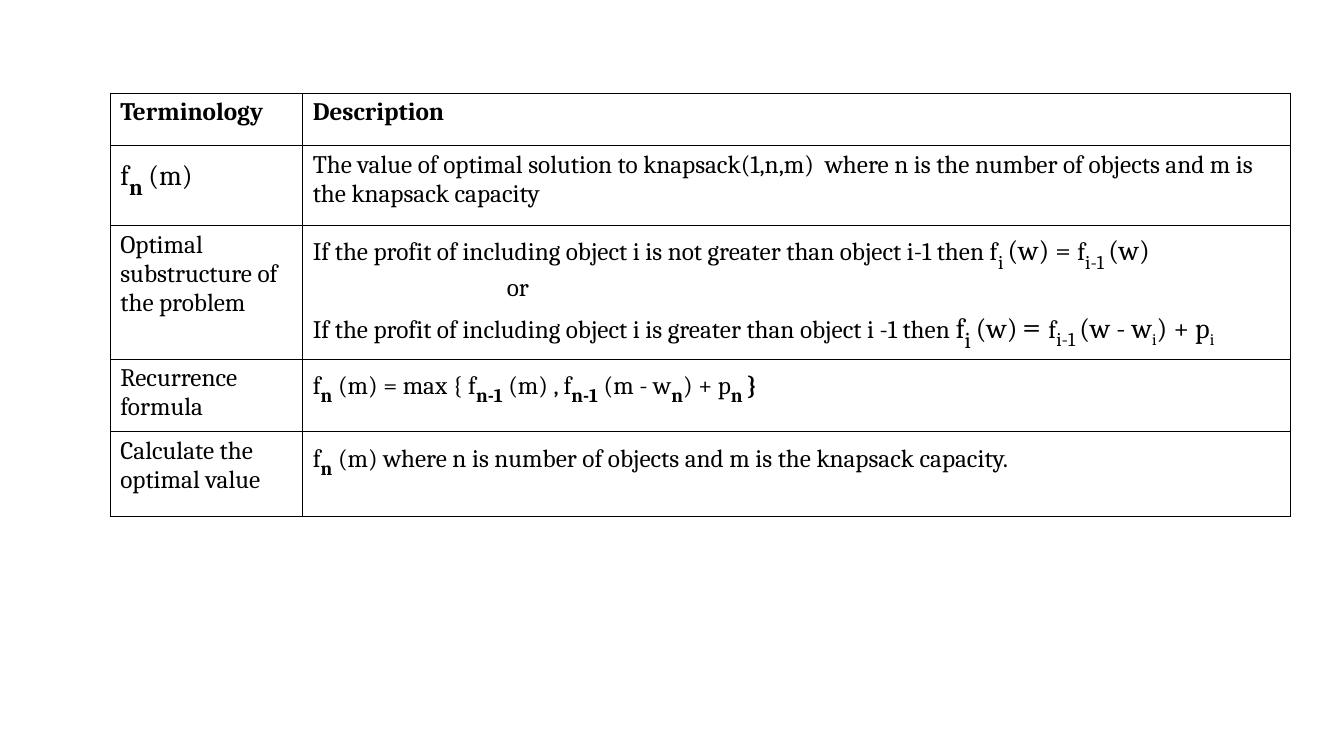
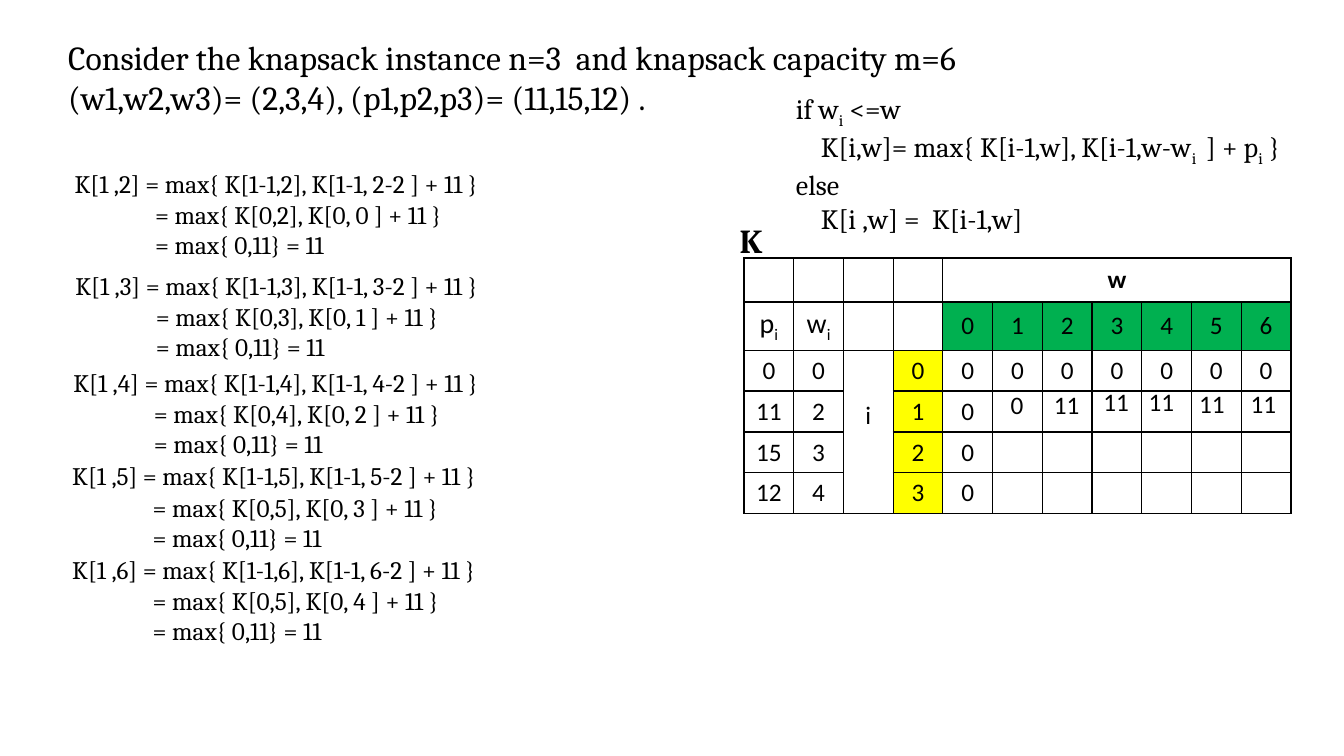
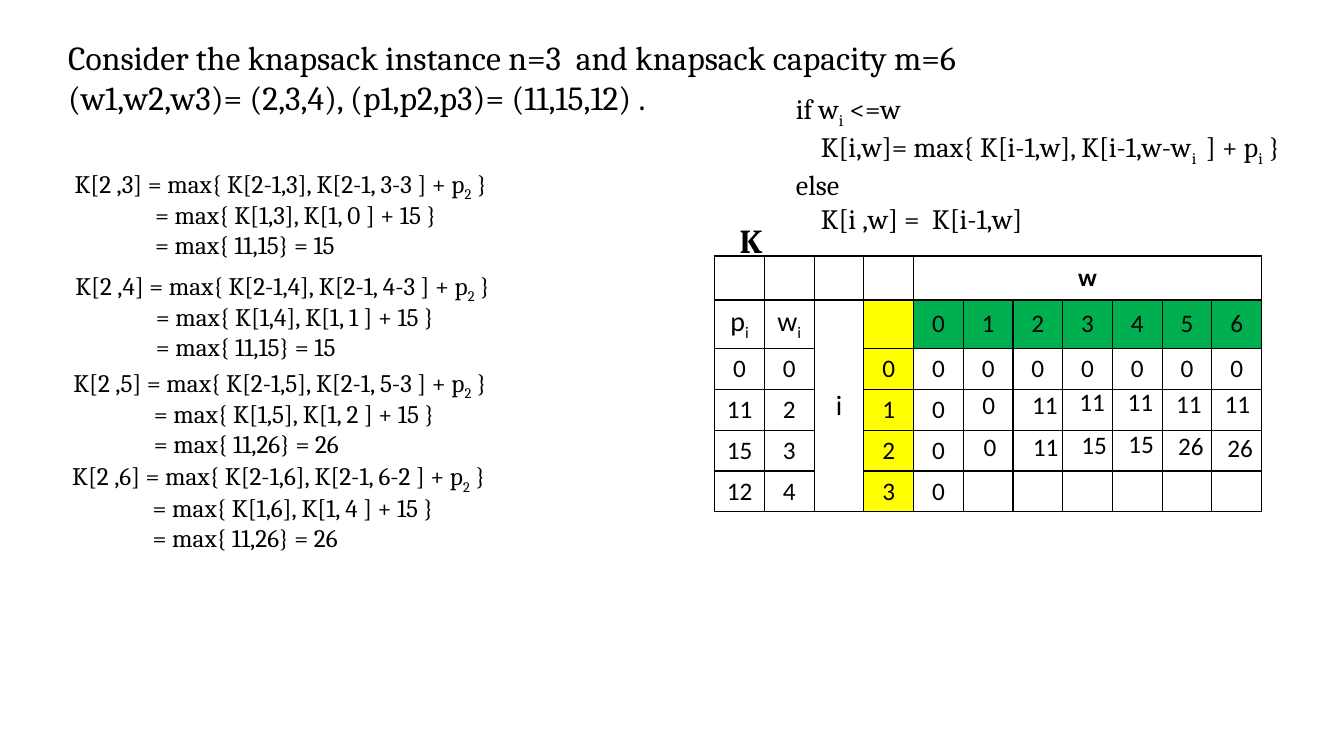
from lxml import etree
from pptx import Presentation
from pptx.dml.color import RGBColor
from pptx.enum.text import MSO_ANCHOR, PP_ALIGN
from pptx.oxml.ns import qn
from pptx.util import Cm, Pt

MIDDLE, TOP = MSO_ANCHOR.MIDDLE, MSO_ANCHOR.TOP
CENTER, LEFT = PP_ALIGN.CENTER, PP_ALIGN.LEFT
SERIF, SANS = "Cambria", "Calibri"
BLACK, WHITE, GREEN, YELLOW = "000000", "FFFFFF", "00B050", "FFFF00"
BLANK_LAYOUT = 6


def rgb(value):
    return RGBColor.from_string(value)


def run(text, size=None, bold=False, sub=False):
    return text, size, bold, sub


def sub(text, size=None, bold=False):
    return run(text, size, bold, True)


def add_runs(p, runs, size, font):
    for text, own_size, bold, lowered in runs:
        r = p.add_run()
        r.text = text
        r.font.name = font
        r.font.size = Pt(own_size or size)
        r.font.bold = bold
        r.font.color.rgb = rgb(BLACK)
        if lowered:
            r.font._element.set("baseline", "-25000")


def fill_text(tf, lines, size, font, align=LEFT):
    for n, (indent, runs) in enumerate(lines):
        p = tf.paragraphs[0] if n == 0 else tf.add_paragraph()
        p.alignment = align
        if indent:
            p._p.get_or_add_pPr().set("marL", str(Cm(indent)))
        add_runs(p, runs, size, font)


def add_text(s, box, lines, size, font=SERIF):
    sp = s.shapes.add_textbox(*map(Cm, box))
    sp.text_frame.word_wrap = True
    fill_text(sp.text_frame, lines, size, font)


def style_cell(cell, color=WHITE, anchor=TOP):
    tcPr = cell._tc.get_or_add_tcPr()
    for side in ("lnL", "lnR", "lnT", "lnB"):
        ln = etree.SubElement(tcPr, qn(f"a:{side}"), w=str(Pt(1)))
        solid = etree.SubElement(ln, qn("a:solidFill"))
        etree.SubElement(solid, qn("a:srgbClr"), val=BLACK)
    cell.fill.solid()
    cell.fill.fore_color.rgb = rgb(color)
    cell.vertical_anchor = anchor


def add_grid(s, left, top, widths, heights):
    frame = s.shapes.add_table(len(heights), len(widths), Cm(left), Cm(top),
                               Cm(sum(widths)), Cm(sum(heights)))
    table = frame.table
    table.first_row = table.horz_banding = False
    for col, width in zip(table.columns, widths):
        col.width = Cm(width)
    for row, height in zip(table.rows, heights):
        row.height = Cm(height)
    return table


TERMS = [
    ([run("Terminology", bold=True)], [(0, [run("Description", bold=True)])]),
    ([run("f", 20), sub("n", 28, True), run(" "), run("(m)", 20)],
     [(0, [run("The value of optimal solution to knapsack(1,n,m)  where n is the "
               "number of objects and m is the knapsack capacity")])]),
    ([run("Optimal substructure of the problem")],
     [(0, [run("If the profit of including object i is not greater than object i-1 then f"),
           sub("i ", 24), run("(w) = ", 20), run("f"), sub("i-1 ", 24), run("(w)", 20)]),
      (4.89, [run("or")]),
      (0, [run("If the profit of including object i is greater than object i -1 then "),
           run("f", 20), sub("i ", 28), run("(w)", 20), run(" ", 16), run("= ", 24),
           run("f"), sub("i-1 ", 24), run("(w - w", 20), sub("i", 20),
           run(") + p", 20), sub("i", 20)])]),
    ([run("Recurrence formula")],
     [(0, [run("f"), sub("n", 24, True), run(" (m) = max { f"), sub("n-1", 24, True),
           run(" (m) , f"), sub("n-1", 24, True), run(" (m - w"), sub("n", 24, True),
           run(") + p"), sub("n ", 24, True), run("}", bold=True)])]),
    ([run("Calculate the optimal value")],
     [(0, [run("f"), sub("n", 24, True),
           run(" (m) where n is number of objects and m is the knapsack capacity.")])]),
]


def add_terms(s, left, top):
    table = add_grid(s, left, top, [4.85, 24.89], [1.32, 2.01, 3.37, 1.83, 2.13])
    for row, (term, description) in enumerate(TERMS):
        for col, lines in enumerate(([(0, term)], description)):
            cell = table.cell(row, col)
            style_cell(cell)
            fill_text(cell.text_frame, lines, 18, SERIF)


def add_knapsack_table(s, left, top, i_row, i_size, i_bottom, corner):
    table = add_grid(s, left, top, [13.79 / 11] * 11, [1.11, 1.2] + [1.03] * 4)
    texts = {(0, 4): [run("w", bold=True)],
             (1, 0): [run("p", 20), sub("i", 20)],
             (1, 1): [run("w", 20), sub("i", 20)],
             (i_row, 2): [run("i", i_size)]}
    colors = {(1, 3): corner}
    for w in range(7):
        texts[1, 4 + w] = texts[2, 4 + w] = [run(str(w))]
        texts[2, 4 + w] = [run("0")]
        colors[1, 4 + w] = GREEN
    for i, (profit, weight) in enumerate([(0, 0), (11, 2), (15, 3), (12, 4)]):
        for col, value in ((0, profit), (1, weight), (3, i), (4, 0)):
            texts[2 + i, col] = [run(str(value))]
        colors[2 + i, 3] = YELLOW
    for row in range(6):
        for col in range(11):
            cell = table.cell(row, col)
            style_cell(cell, colors.get((row, col), WHITE), MIDDLE)
            if (row, col) in texts:
                fill_text(cell.text_frame, [(0, texts[row, col])], 18, SANS, CENTER)
    table.cell(0, 4).merge(table.cell(0, 10))
    table.cell(i_row, 2).merge(table.cell(5, 2))
    table.cell(i_row, 2).margin_bottom = Cm(i_bottom)


def add_steps(s, left, top, i, profit, steps):
    places = [(0.06, 0), (0.08, 2.57), (0.03, 5.01), (0, 7.37), (0, 9.73)]
    for (dx, dy), (w, weight, above, rest, result) in zip(places, steps):
        x, y = left + dx, top + dy
        first = run(f"K[{i} ,{w}] = max{{ K[{i}-1,{w}], K[{i}-1, {w}-{weight} ] + ")
        add_text(s, (x, y, 16.3, 1.0), [(0, [first] + profit)], 18)
        add_text(s, (x + 2.03, y + 0.79, 15, 1.8), [
            (0, [run(f"= max{{ K[{i - 1},{above}], K[{i - 1}, {rest} ] + {11 if i == 1 else 15} }}")]),
            (0, [run(f"= max{{ {result}")])], 18)


def add_values(s, values):
    for text, x, y in values:
        add_text(s, (x, y, 1.2, 1.02), [(0, [run(text)])], 18, SANS)


def add_problem(s):
    add_text(s, (1.47, 0.81, 27.1, 2.31), [
        (0, [run("Consider the knapsack instance n=3  and knapsack capacity m=6")]),
        (0, [run("(w1,w2,w3)= (2,3,4), (p1,p2,p3)= (11,15,12) .")])], 24)
    add_text(s, (18.39, 5.41, 1, 1.27), [(0, [run("K", bold=True)])], 24)
    add_text(s, (19.81, 2.18, 14, 3.68), [
        (0, [run("if w"), sub("i"), run(" <=w")]),
        (0.63, [run("K[i,w]= max{ K[i-1,w], K[i-1,w-w"), sub("i "),
                run(" ] + p"), sub("i"), run(" }")]),
        (0, [run("else")]),
        (0.63, [run("K[i ,w] =  K[i-1,w]")])], 20)


def knapsack_slide(s, table, steps, values):
    add_knapsack_table(s, *table)
    add_problem(s)
    add_values(s, values)
    add_steps(s, 1.57, 4.11, *steps)


def main():
    prs = Presentation()
    prs.slide_width, prs.slide_height = Cm(33.87), Cm(19.05)
    terms, first_row, second_row = (
        prs.slides.add_slide(prs.slide_layouts[BLANK_LAYOUT]) for _ in range(3))
    add_terms(terms, 2.78, 2.35)

    best = "0,11} = 11"
    knapsack_slide(
        first_row, (18.75, 6.5, 2, 18, 0.95, WHITE),
        (1, [run("11 }")], [(2, 2, 2, 0, best), (3, 2, 3, 1, best), (4, 2, 4, 2, best),
                            (5, 2, 5, 3, best), (6, 2, 5, 4, best)]),
        [("0", 25.22, 9.68), ("11", 26.31, 9.68), ("11", 27.56, 9.6),
         ("11", 28.7, 9.6), ("11", 29.97, 9.65), ("11", 31.27, 9.65)])

    low, high = "11,15} = 15", "11,26} = 26"
    knapsack_slide(
        second_row, (18.01, 6.45, 1, 20, 0.13, YELLOW),
        (2, [run("p"), sub("2"), run(" }")],
         [(3, 3, 3, 0, low), (4, 3, 4, 1, low), (5, 3, 5, 2, high), (6, 2, 6, 4, high)]),
        [("0", 24.51, 9.68), ("11", 25.76, 9.68), ("11", 26.95, 9.6),
         ("11", 28.17, 9.6), ("11", 29.39, 9.65), ("11", 30.61, 9.65),
         ("0", 24.54, 10.74), ("11", 25.78, 10.74), ("15", 27, 10.69),
         ("15", 28.19, 10.67), ("26", 29.44, 10.72), ("26", 30.68, 10.77)])
    prs.save("out.pptx")


if __name__ == "__main__":
    main()
